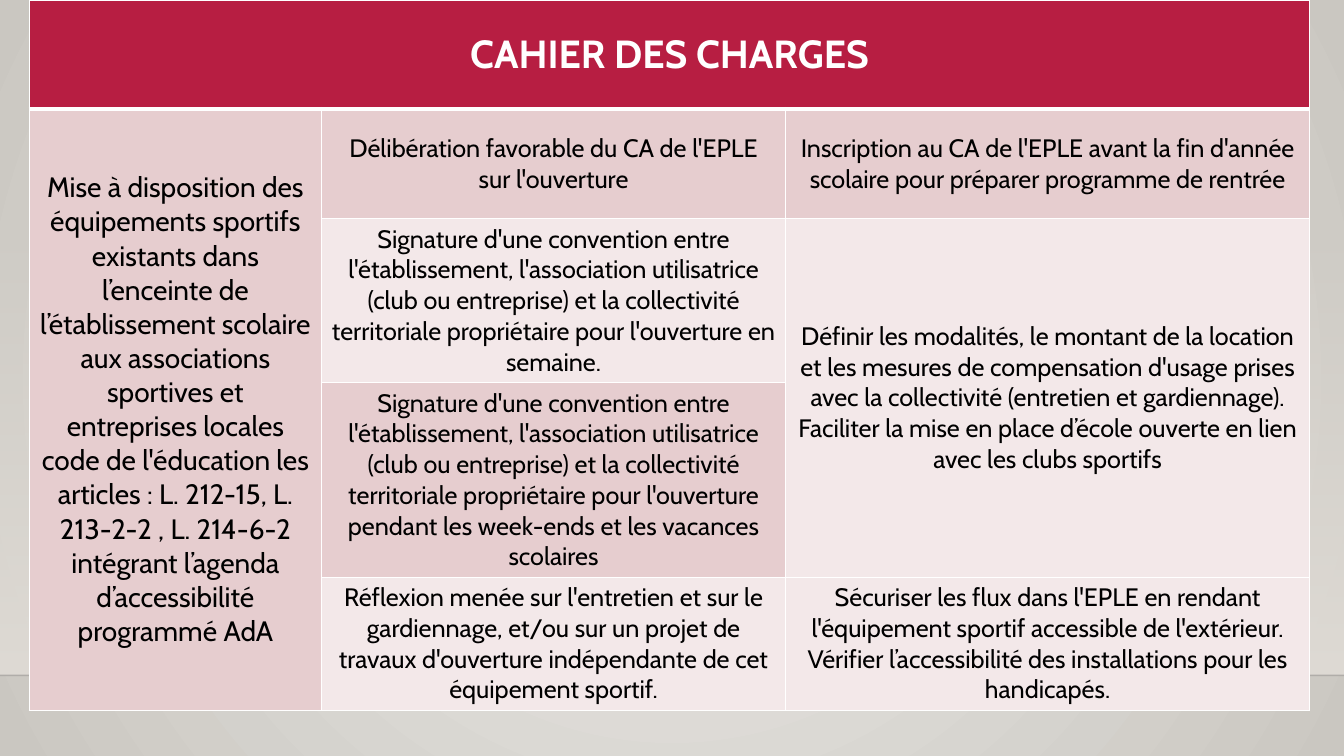
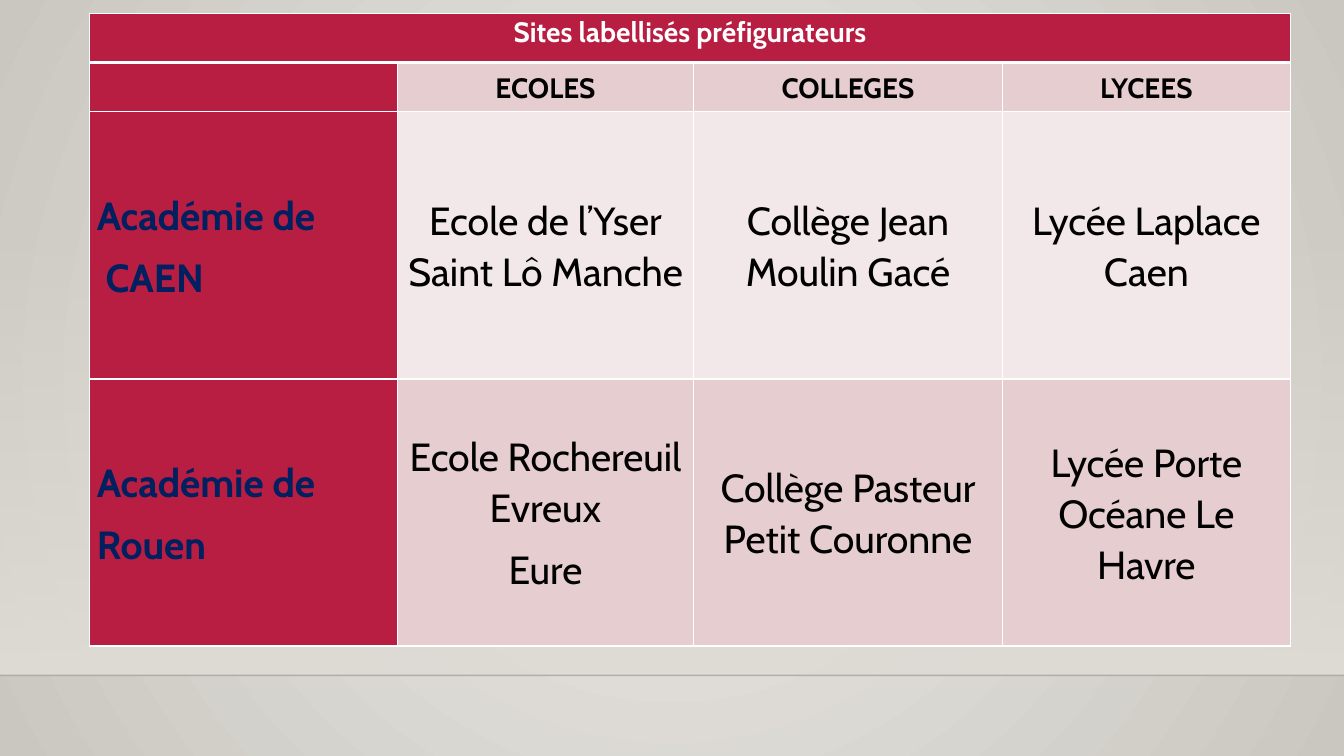
import pptx
import pptx.dml.color
import pptx.enum.shapes
import pptx.enum.text
import pptx.oxml.ns
import pptx.util
from lxml import etree
from pptx.util import Inches

FONT = "Cabin"
RED, PINK, PALE = "B71E42", "E6CDCF", "F3E8E9"
WHITE, BLACK, NAVY = "FFFFFF", "000000", "002060"
SAND = "DFDBD5"
LEFT = pptx.enum.text.PP_ALIGN.LEFT
CENTER = pptx.enum.text.PP_ALIGN.CENTER
TOP = pptx.enum.text.MSO_ANCHOR.TOP
MIDDLE = pptx.enum.text.MSO_ANCHOR.MIDDLE


def rgb(value):
    return pptx.dml.color.RGBColor.from_string(value)


def add_child(parent, tag, **attributes):
    return etree.SubElement(parent, pptx.oxml.ns.qn(tag), attributes)


def descendants(element, tag):
    return list(element.iter(pptx.oxml.ns.qn(tag)))


class Deck:
    def __init__(self):
        self.presentation = pptx.Presentation()
        self.presentation.slide_width = Inches(13.33)
        self.presentation.slide_height = Inches(7.5)
        self.slide = None
        self.master = self.presentation.slide_master
        self.paint_background()

    def add_slide(self):
        self.slide = self.presentation.slides.add_slide(self.presentation.slide_layouts[6])
        if len(self.presentation.slides) == 1:
            self.add_floor()

    def gradient(self, fill, colors):
        fill.gradient()
        for stop, position, color in zip(fill.gradient_stops, (0, 1), colors):
            stop.position = position
            stop.color.rgb = rgb(color)

    def paint_background(self):
        self.gradient(self.master.background.fill, ("ECEAE7", "CAC7C1"))
        gradient = descendants(self.master.element, "a:gradFill")[0]
        for linear in descendants(gradient, "a:lin"):
            gradient.remove(linear)
        circle = add_child(gradient, "a:path", path="circle")
        add_child(circle, "a:fillToRect", l="50000", t="50000", r="50000", b="50000")

    def add_floor(self):
        width, horizon = self.presentation.slide_width, Inches(6.7)
        wall = self.slide.shapes.add_shape(
            pptx.enum.shapes.MSO_SHAPE.RECTANGLE, 0, Inches(2.21), width, Inches(4.49))
        wall.shadow.inherit = False
        wall.line.fill.background()
        self.gradient(wall.fill, (SAND, SAND))
        wall.fill.gradient_angle = 270
        add_child(descendants(wall.element, "a:srgbClr")[0], "a:alpha", val="0")

        edge = self.slide.shapes.add_connector(
            pptx.enum.shapes.MSO_CONNECTOR.STRAIGHT, 0, horizon, width, horizon)
        edge.line.color.rgb = rgb("000001")
        edge.line.width = pptx.util.Pt(1)
        add_child(descendants(edge.element, "a:srgbClr")[0], "a:alpha", val="20000")
        add_child(edge.element.spPr, "a:effectLst")

        for number, shape in enumerate((wall, edge), 20):
            descendants(shape.element, "p:cNvPr")[0].set("id", str(number))
            self.master.shapes.element.append(shape.element)

    def add_table(self, left, top, widths, heights, merges):
        frame = self.slide.shapes.add_table(
            len(heights), len(widths), Inches(left), Inches(top),
            Inches(sum(widths)), Inches(sum(heights)))
        table = frame.table
        table.first_row = table.horz_banding = False
        for column, width in zip(table.columns, widths):
            column.width = Inches(width)
        for index, (row, height) in enumerate(zip(table.rows, heights)):
            row.height = Inches(height)
            for cell in row.cells:
                self.fill_cell(cell, RED if index == 0 else PINK if index % 2 else PALE)
        for index, row in enumerate(descendants(frame.element, "a:tr")):
            for properties in descendants(row, "a:tcPr"):
                self.add_borders(properties, 3 if index == 1 else 1, 3 if index == 0 else 1)
        for first, last in merges:
            table.cell(*first).merge(table.cell(*last))
        return table

    def fill_cell(self, cell, color):
        cell.fill.solid()
        cell.fill.fore_color.rgb = rgb(color)

    def add_borders(self, properties, top, bottom):
        sides = (("L", 1), ("R", 1), ("T", top), ("B", bottom))
        for index, (side, points) in enumerate(sides):
            border = add_child(properties, f"a:ln{side}", w=str(pptx.util.Pt(points)))
            add_child(add_child(border, "a:solidFill"), "a:srgbClr", val=WHITE)
            properties.insert(index, border)

    def set_text(self, cell, lines, size, color=BLACK, bold=False,
                 align=CENTER, anchor=MIDDLE, spaced=False):
        cell.vertical_anchor = anchor
        if spaced:
            cell.margin_left = cell.margin_right = Inches(0.07)
            cell.margin_top = cell.margin_bottom = 0
        frame = cell.text_frame
        for index, line in enumerate(lines):
            paragraph = frame.add_paragraph() if index else frame.paragraphs[0]
            paragraph.alignment = align
            if spaced:
                paragraph.line_spacing = 1.07
                paragraph.space_after = pptx.util.Pt(8)
            run = paragraph.add_run()
            run.text = line
            run.font.name = FONT
            run.font.size = pptx.util.Pt(size)
            run.font.bold = bold
            run.font.color.rgb = rgb(color)


def add_specifications(deck):
    deck.add_slide()
    table = deck.add_table(
        0.29, 0, (2.9, 4.6, 5.2), (1.08, 1.09, 1.09, 1.75, 1.09),
        (((0, 0), (0, 2)), ((1, 0), (4, 0)), ((2, 2), (3, 2))))
    deck.set_text(table.cell(0, 0), ["CAHIER DES CHARGES"], 28, WHITE, True)
    deck.set_text(table.cell(1, 0), [
        "Mise à disposition des équipements sportifs existants dans l’enceinte de "
        "l’établissement scolaire aux associations sportives et entreprises locales "
        "code de l'éducation les articles : L. 212-15, L. 213-2-2 , L. 214-6-2 "
        "intégrant l’agenda d’accessibilité programmé AdA"], 20)
    agreement = ("Signature d'une convention entre l'établissement, l'association "
                 "utilisatrice (club ou entreprise) et la collectivité territoriale "
                 "propriétaire pour l'ouverture ")
    conditions = {
        (1, 1): "Délibération favorable du CA de l'EPLE sur l'ouverture",
        (1, 2): "Inscription au CA de l'EPLE avant la fin d'année scolaire pour "
                "préparer programme de rentrée",
        (2, 1): agreement + "en semaine.",
        (2, 2): "Définir les modalités, le montant de la location et les mesures de "
                "compensation d'usage prises avec la collectivité (entretien et "
                "gardiennage). Faciliter la mise en place d’école ouverte en lien "
                "avec les clubs sportifs",
        (3, 1): agreement + "pendant les week-ends et les vacances scolaires",
        (4, 1): "Réflexion menée sur l'entretien et sur le gardiennage, et/ou sur un "
                "projet de travaux d'ouverture indépendante de cet équipement sportif.",
        (4, 2): "Sécuriser les flux dans l'EPLE en rendant l'équipement sportif "
                "accessible de l'extérieur. Vérifier l’accessibilité des "
                "installations pour les handicapés.",
    }
    for position, text in conditions.items():
        deck.set_text(table.cell(*position), [text], 18)


def add_sites(deck):
    deck.add_slide()
    table = deck.add_table(
        0.89, 0.13, (3.05, 2.94, 3.06, 2.86), (0.49, 0.49, 2.65, 2.65),
        (((0, 0), (0, 3)),))
    deck.set_text(table.cell(0, 0), ["Sites labellisés préfigurateurs"], 20, WHITE, True,
                  anchor=TOP, spaced=True)
    deck.fill_cell(table.cell(1, 0), RED)
    for column, level in enumerate(("ECOLES", "COLLEGES", "LYCEES"), 1):
        deck.set_text(table.cell(1, column), [level], 20, bold=True, spaced=True)
    academies = (
        (["Académie de", " CAEN"], ["Ecole de l’Yser Saint Lô Manche"],
         ["Collège Jean Moulin Gacé"], ["Lycée Laplace Caen"]),
        (["Académie de", "Rouen"], ["Ecole Rochereuil Evreux", "Eure"],
         ["Collège Pasteur Petit Couronne"], ["Lycée Porte Océane Le Havre"]),
    )
    for row, (academy, *schools) in enumerate(academies, 2):
        deck.fill_cell(table.cell(row, 0), RED)
        deck.set_text(table.cell(row, 0), academy, 28, NAVY, True, LEFT, spaced=True)
        for column, school in enumerate(schools, 1):
            deck.set_text(table.cell(row, column), school, 28, spaced=True)


def main():
    deck = Deck()
    add_specifications(deck)
    add_sites(deck)
    deck.presentation.save("out.pptx")


if __name__ == "__main__":
    main()
